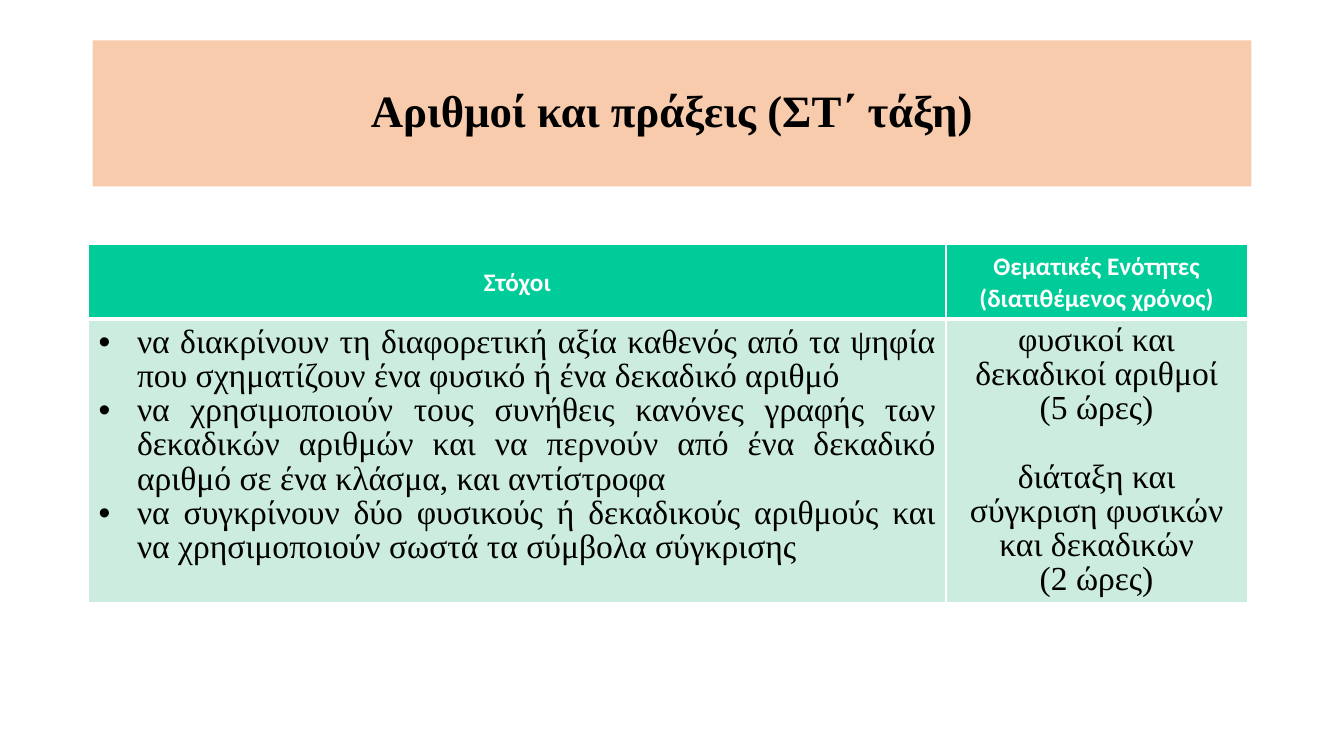
from dataclasses import dataclass

from lxml.etree import SubElement
from pptx import Presentation
from pptx.dml.color import RGBColor
from pptx.enum.text import MSO_ANCHOR, MSO_AUTO_SIZE, PP_ALIGN
from pptx.oxml.ns import qn
from pptx.util import Emu, Pt

SCALE = 9144  # EMU in one px, 100 px to the inch


@dataclass(frozen=True)
class Theme:
    serif: str = "Times New Roman"
    sans: str = "Calibri"
    black: str = "000000"
    white: str = "FFFFFF"
    peach: str = "F8CBAD"
    green: str = "00CC99"
    mint: str = "CBECDE"
    title: int = 32
    head: int = 18
    body: int = 24
    thin: float = 0.91
    thick: float = 2.95


def px(size):
    return Emu(size * SCALE)


def paint(fill, color):
    fill.solid()
    fill.fore_color.rgb = RGBColor.from_string(color)


class Deck:
    def __init__(self, theme, width, height):
        self.theme = theme
        self.file = Presentation()
        self.file.slide_width, self.file.slide_height = px(width), px(height)
        self.slide = self.file.slides.add_slide(self.file.slide_layouts[5])

    def text(self, frame, lines, size, font, color, bold=False,
             align=PP_ALIGN.CENTER, space=0.92, bullet=False, gaps=None):
        """Write lines as paragraphs; gaps maps a line index to points before it."""
        frame.word_wrap = True
        for i, line in enumerate(lines):
            para = frame.add_paragraph() if i else frame.paragraphs[0]
            para.alignment = align
            para.line_spacing = space
            para.space_before = Pt((gaps or {}).get(i, 0))
            if bullet:
                props = para._p.get_or_add_pPr()
                props.set("marL", str(px(38)))
                props.set("indent", str(-px(38)))
                SubElement(props, qn("a:buFont"), typeface="Arial")
                SubElement(props, qn("a:buChar"), char="•")
            run = para.add_run()
            run.text = line
            run.font.size, run.font.name, run.font.bold = Pt(size), font, bold
            run.font.color.rgb = RGBColor.from_string(color)

    def title(self, line, left, top, width, height):
        t = self.theme
        box = self.slide.shapes.title
        box.left, box.top, box.width, box.height = map(
            px, (left, top, width, height))
        paint(box.fill, t.peach)
        frame = box.text_frame
        frame.auto_size = MSO_AUTO_SIZE.NONE
        frame.vertical_anchor = MSO_ANCHOR.MIDDLE
        self.text(frame, [line], t.title, t.serif, t.black, True, space=0.9)

    def grid(self, left, top, cols, rows):
        table = self.slide.shapes.add_table(
            len(rows), len(cols), px(left), px(top),
            px(sum(cols)), px(sum(rows))).table
        table.horz_banding = False
        for col, width in zip(table.columns, cols):
            col.width = px(width)
        for row, height in zip(table.rows, rows):
            row.height = px(height)
        return table

    def cell(self, cell, lines, head=False, inset=5, **style):
        t = self.theme
        cell.margin_left = cell.margin_right = px(10)
        cell.margin_top, cell.margin_bottom = px(inset), px(5)
        cell.vertical_anchor = MSO_ANCHOR.MIDDLE if head else MSO_ANCHOR.TOP
        heavy = "lnB" if head else "lnT"
        for side in ("lnL", "lnR", "lnT", "lnB"):
            width = Pt(t.thick if side == heavy else t.thin)
            line = SubElement(cell._tc.get_or_add_tcPr(), qn(f"a:{side}"),
                              w=str(width))
            fill = SubElement(line, qn("a:solidFill"))
            SubElement(fill, qn("a:srgbClr"), val=t.white)
        paint(cell.fill, t.green if head else t.mint)
        if head:
            self.text(cell.text_frame, lines, t.head, t.sans, t.white, True,
                      space=1.04, **style)
        else:
            self.text(cell.text_frame, lines, t.body, t.serif, t.black, **style)


GOALS = [
    "να διακρίνουν τη διαφορετική αξία καθενός από τα ψηφία που σχηματίζουν "
    "ένα φυσικό ή ένα δεκαδικό αριθμό",
    "να χρησιμοποιούν τους συνήθεις κανόνες γραφής των δεκαδικών αριθμών και "
    "να περνούν από ένα δεκαδικό αριθμό σε ένα κλάσμα, και αντίστροφα",
    "να συγκρίνουν δύο φυσικούς ή δεκαδικούς αριθμούς και να χρησιμοποιούν "
    "σωστά τα σύμβολα σύγκρισης",
]
UNITS = [
    "φυσικοί και δεκαδικοί αριθμοί",
    "(5 ώρες)",
    "διάταξη και σύγκριση φυσικών και δεκαδικών",
    "(2 ώρες)",
]


def main():
    deck = Deck(Theme(), 1334, 750)
    deck.title("Αριθμοί και πράξεις (ΣΤ΄ τάξη)", 92, 40, 1150, 145)
    table = deck.grid(88, 243, cols=(851, 299), rows=(73, 281))
    deck.cell(table.cell(0, 0), ["Στόχοι"], head=True)
    deck.cell(table.cell(0, 1),
              ["Θεματικές Ενότητες", "(διατιθέμενος χρόνος)"], head=True)
    deck.cell(table.cell(1, 0), GOALS, inset=7, align=PP_ALIGN.JUSTIFY,
              bullet=True)
    deck.cell(table.cell(1, 1), UNITS, gaps={2: 24.4})
    deck.file.save("out.pptx")


if __name__ == "__main__":
    main()
